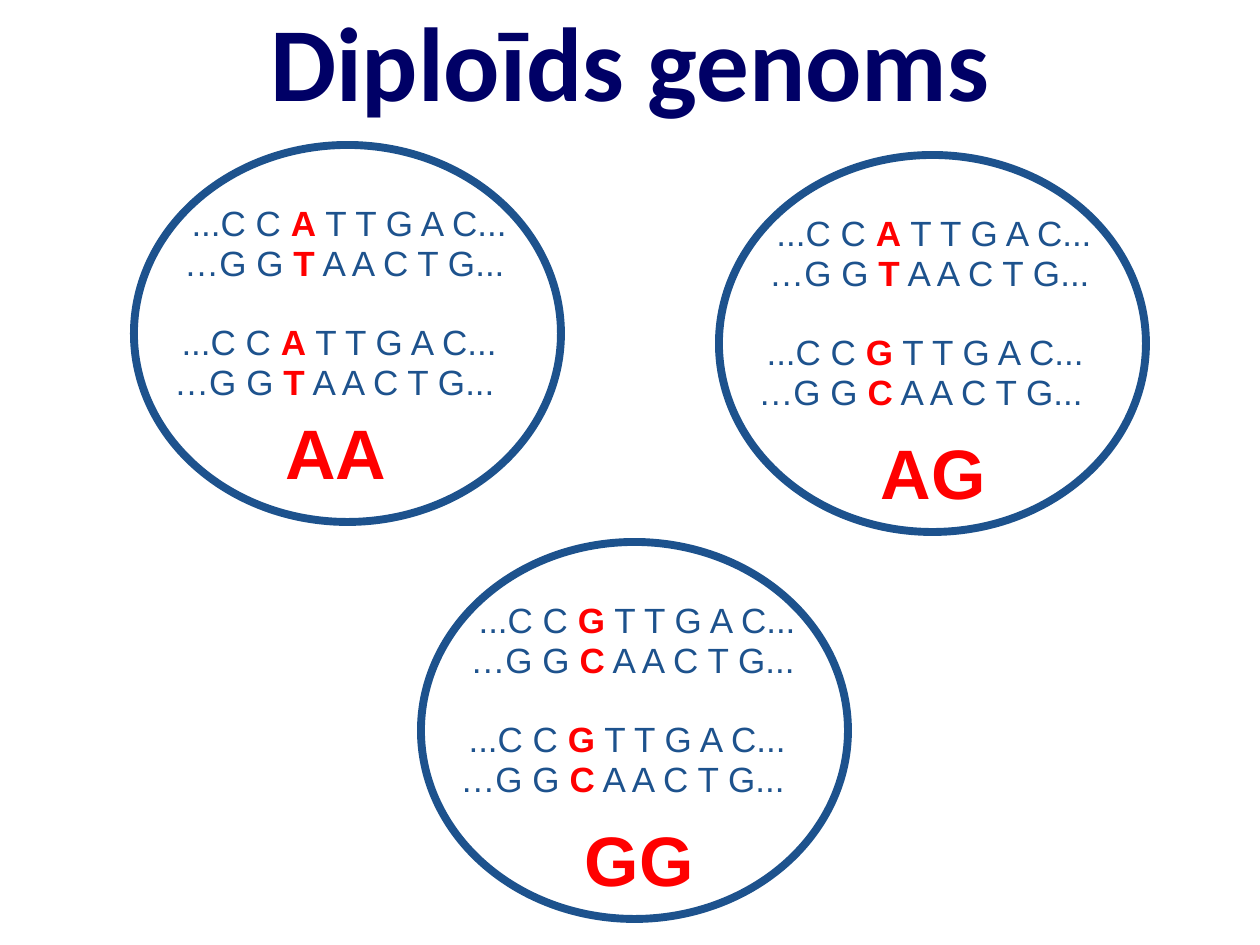
"""Build a slide of three diploid genotypes, each cell holding two DNA pairs."""
from pptx import Presentation
from pptx.dml.color import RGBColor
from pptx.enum.shapes import MSO_SHAPE
from pptx.enum.text import MSO_ANCHOR, MSO_AUTO_SIZE, PP_ALIGN
from pptx.util import Pt

OVAL = MSO_SHAPE.OVAL
MIDDLE = MSO_ANCHOR.MIDDLE
FIT, FIXED = MSO_AUTO_SIZE.SHAPE_TO_FIT_TEXT, MSO_AUTO_SIZE.NONE
RIGHT, CENTER = PP_ALIGN.RIGHT, PP_ALIGN.CENTER

SCALE = 914400 / 126
COLORS = {"navy": "000066", "blue": "1D528D", "red": "FF0000"}
BASE = {"name": "Arial", "size": Pt(20), "bold": False}
SITE = {**BASE, "bold": True}
LABEL = {**SITE, "size": Pt(40)}
TITLE = {**SITE, "name": "Calibri", "size": Pt(60)}


def emu(*sizes):
    return [round(size * SCALE) for size in sizes]


def write(shape, align, fit, wrap, runs):
    frame = shape.text_frame
    frame.auto_size = fit
    frame.word_wrap = wrap
    para = frame.paragraphs[0]
    para.alignment = align
    for text, style, color in runs:
        run = para.add_run()
        run.text = text
        for key, value in style.items():
            setattr(run.font, key, value)
        run.font.color.rgb = RGBColor.from_string(COLORS[color])


deck = Presentation()
deck.slide_width, deck.slide_height = emu(1260, 945)
slide = deck.slides.add_slide(deck.slide_layouts[5])
shapes = slide.shapes

title = shapes.title
title.left, title.top, title.width, title.height = emu(63, 21, 1134, 78)
title.text_frame.vertical_anchor = MIDDLE
write(title, CENTER, FIXED, True, [("Diploīds genoms", TITLE, "navy")])

PAIRS = {"A": "T", "G": "C"}
WIDTHS = {"A": 345, "T": 353, "G": 347, "C": 356}
STARTS = [(40, 50), (30, 169)]
CELLS = [
    ("AA", 134, 145, 139, 258, 126),
    ("AG", 719, 155, 149, 268, 130),
    ("GG", 421, 542, 150, 268, 135),
]

for name, left, top, dx, dy, width in CELLS:
    for base, (x, y) in zip(name, STARTS):
        mate = PAIRS[base]
        strands = [
            ("...C C ", base, " T T G A C...", x, y),
            ("…G G ", mate, " A A C T G...", x - 10, y + 40),
        ]
        for head, site, tail, sx, sy in strands:
            box = shapes.add_textbox(*emu(left + sx, top + sy, WIDTHS[site], 54))
            runs = [(head, BASE, "blue"), (site, SITE, "red"), (tail, BASE, "blue")]
            write(box, RIGHT, FIT, False, runs)

    cell = shapes.add_shape(OVAL, *emu(left, top, 427, 377))
    cell.shadow.inherit = False
    cell.fill.background()
    cell.line.color.rgb = RGBColor.from_string(COLORS["blue"])
    cell.line.width = Pt(4.5)

    box = shapes.add_textbox(*emu(left + dx, top + dy, width, 97))
    write(box, RIGHT, FIT, False, [(name, LABEL, "red")])

deck.save("out.pptx")
